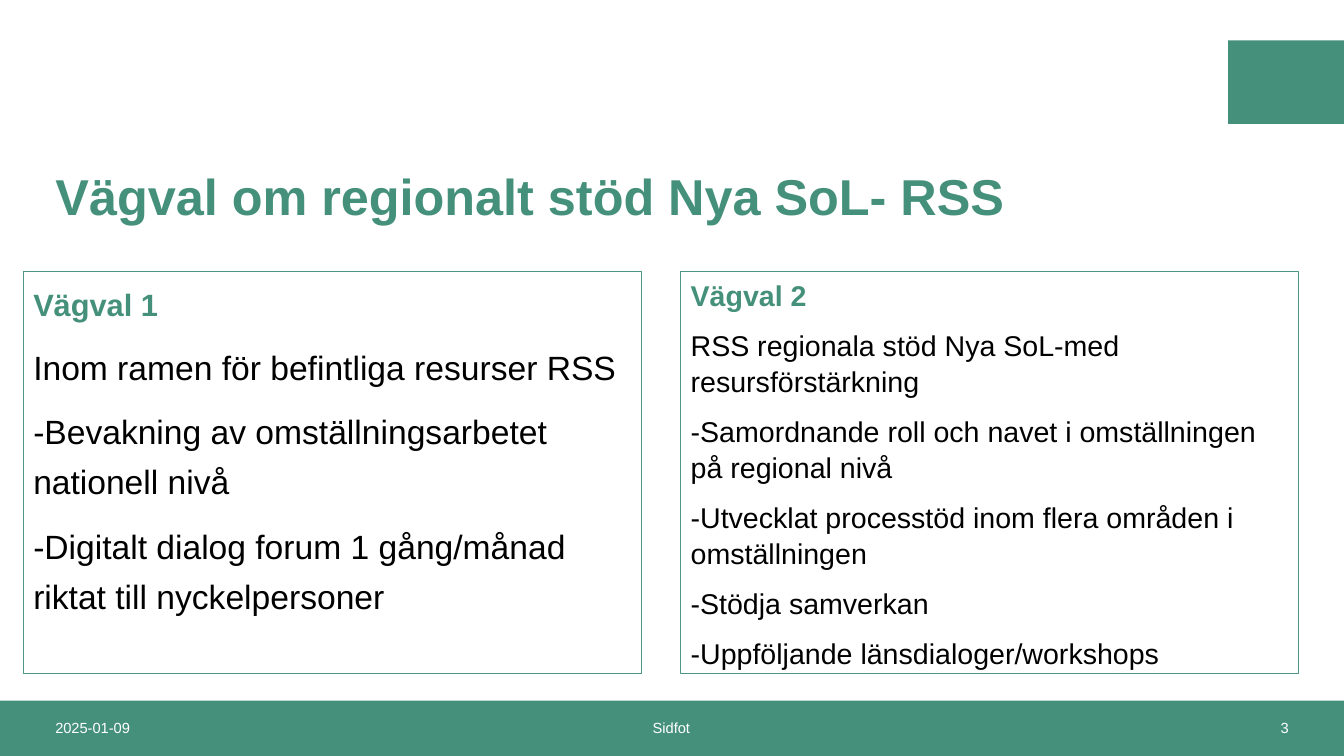
import pptx
import pptx.dml.color
import pptx.enum.shapes
import pptx.enum.text
import pptx.oxml
import pptx.util

Inches, Pt = pptx.util.Inches, pptx.util.Pt
ALIGN = pptx.enum.text.PP_ALIGN
MIDDLE = pptx.enum.text.MSO_ANCHOR.MIDDLE
GREEN = pptx.dml.color.RGBColor(0x45, 0x90, 0x7A)
BORDER = pptx.dml.color.RGBColor(0x4B, 0x95, 0x87)
BLACK = pptx.dml.color.RGBColor(0, 0, 0)
WHITE = pptx.dml.color.RGBColor(0xFF, 0xFF, 0xFF)

# Content
TITLE = "Vägval om regionalt stöd Nya SoL- RSS"
CHOICES = [
    {"heading": "Vägval 1", "heading_size": 22, "size": 24, "spacing": 1.25,
     "lines": ["Inom ramen för befintliga resurser RSS",
               "-Bevakning av omställningsarbetet nationell nivå",
               "-Digitalt dialog forum 1 gång/månad riktat till nyckelpersoner"]},
    {"heading": "Vägval 2", "heading_size": 20.4, "size": 20.4, "spacing": 1.05,
     "lines": ["RSS regionala stöd Nya SoL-med resursförstärkning",
               "-Samordnande roll och navet i omställningen på regional nivå",
               "-Utvecklat processtöd inom flera områden i omställningen",
               "-Stödja samverkan",
               "-Uppföljande länsdialoger/workshops"]},
]
FOOTER = [("2025-01-09", 0.45, 3, ALIGN.LEFT),
          ("Sidfot", 3.91, 5.5, ALIGN.CENTER),
          ("3", 9.88, 3, ALIGN.RIGHT)]
GREEN_BLOCKS = [(0, 6.95, 13.33, 0.55), (12.18, 0.4, 1.15, 0.83)]

# Layout in inches
BOX_LEFT, BOX_TOP, BOX_WIDTH, BOX_HEIGHT = 0.23, 2.69, 6.13, 3.99
BOX_STEP = 6.52


def place(shape, left, top, width, height):
    shape.left, shape.top = Inches(left), Inches(top)
    shape.width, shape.height = Inches(width), Inches(height)


def write(paragraph, text, size, color, bold=False, **layout):
    paragraph.text = text
    for name, value in layout.items():
        setattr(paragraph, name, value)
    font = paragraph.runs[0].font
    for name, value in {"name": "Arial", "size": Pt(size), "bold": bold}.items():
        setattr(font, name, value)
    font.color.rgb = color


def remove_bullet(paragraph):
    properties = paragraph._p.get_or_add_pPr()
    properties.set("marL", "0")
    properties.set("indent", "0")
    properties.append(pptx.oxml.parse_xml(
        '<a:buNone xmlns:a="http://schemas.openxmlformats.org/drawingml/2006/main"/>'))


def fill_choice(box, choice):
    frame = box.text_frame
    frame.word_wrap = True
    frame.auto_size = pptx.enum.text.MSO_AUTO_SIZE.NONE
    for index, text in enumerate([choice["heading"]] + choice["lines"]):
        is_heading = index == 0
        paragraph = frame.paragraphs[0] if is_heading else frame.add_paragraph()
        remove_bullet(paragraph)
        write(paragraph, text,
              choice["heading_size"] if is_heading else choice["size"],
              GREEN if is_heading else BLACK, is_heading,
              line_spacing=choice["spacing"],
              space_before=Pt(0 if is_heading else 10))


def main():
    presentation = pptx.Presentation()
    presentation.slide_width = Inches(13.33)
    presentation.slide_height = Inches(7.5)
    slide = presentation.slides.add_slide(presentation.slide_layouts[3])

    # Green footer band and corner block
    for block in GREEN_BLOCKS:
        shape = slide.shapes.add_shape(
            pptx.enum.shapes.MSO_SHAPE.RECTANGLE, *map(Inches, block))
        shape.shadow.inherit = False
        shape.fill.solid()
        shape.fill.fore_color.rgb = GREEN
        shape.line.fill.background()

    # Title
    title = slide.shapes.title
    place(title, 0.45, 1.32, 11.39, 1.32)
    title.text_frame.vertical_anchor = MIDDLE
    write(title.text_frame.paragraphs[0], TITLE, 36, GREEN, True,
          alignment=ALIGN.LEFT, line_spacing=0.9)

    # Two choices side by side
    for index, choice in enumerate(CHOICES):
        box = slide.placeholders[index + 1]
        place(box, BOX_LEFT + index * BOX_STEP, BOX_TOP, BOX_WIDTH, BOX_HEIGHT)
        box.line.color.rgb = BORDER
        box.line.width = Pt(0.75)
        fill_choice(box, choice)

    # Footer texts
    for text, left, width, alignment in FOOTER:
        box = slide.shapes.add_textbox(*map(Inches, (left, 6.95, width, 0.54)))
        box.text_frame.word_wrap = True
        box.text_frame.vertical_anchor = MIDDLE
        write(box.text_frame.paragraphs[0], text, 10.5, WHITE, alignment=alignment)

    presentation.save("out.pptx")


if __name__ == "__main__":
    main()
